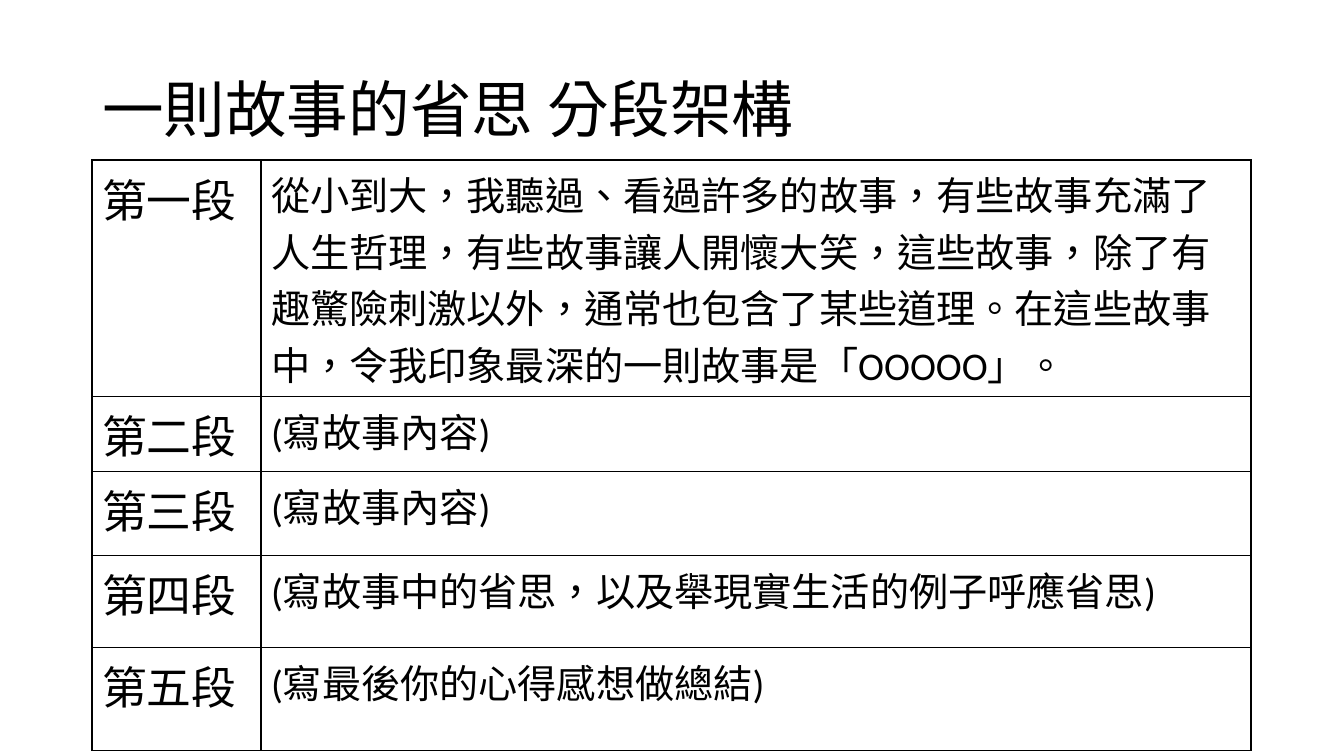
from dataclasses import dataclass

from lxml.etree import SubElement
from pptx import Presentation
from pptx.dml.color import RGBColor
from pptx.enum.lang import MSO_LANGUAGE_ID as Lang
from pptx.enum.text import MSO_ANCHOR as Anchor, MSO_AUTO_SIZE as Fit, PP_ALIGN as Align
from pptx.oxml.ns import qn
from pptx.util import Pt

TITLE = "一則故事的省思 分段架構"
ROWS = [  # label, text, height in px
    ("第一段", "從小到大，我聽過、看過許多的故事，有些故事充滿了人生哲理，"
     "有些故事讓人開懷大笑，這些故事，除了有趣驚險刺激以外，"
     "通常也包含了某些道理。在這些故事中，令我印象最深的一則故事是「OOOOO」。", 103),
    ("第二段", "(寫故事內容)", 75),
    ("第三段", "(寫故事內容)", 84),
    ("第四段", "(寫故事中的省思，以及舉現實生活的例子呼應省思)", 92),
    ("第五段", "(寫最後你的心得感想做總結)", 103),
]
COLS = (169, 990)
LEFT, WIDTH = 92, sum(COLS)
TITLE_TOP, TITLE_HIGH, TABLE_TOP = 40, 146, 160


@dataclass(frozen=True)
class Theme:
    font: str = "Calibri"
    ink: str = "000000"
    head: int = 44
    label: int = 32
    body: int = 28
    rule: int = 1


THEME = Theme()


def px(n):
    return round(n * 914400 / 100.8)


def write(frame, text, size, anchor=Anchor.TOP, spacing=None):
    frame.word_wrap = True
    frame.vertical_anchor = anchor
    para = frame.paragraphs[0]
    para.alignment = Align.LEFT
    if spacing:
        para.line_spacing = spacing
    run = para.add_run()
    run.text = text
    font = run.font
    font.name, font.size = THEME.font, Pt(size)
    font.color.rgb = RGBColor.from_string(THEME.ink)
    font.language_id = Lang.TRADITIONAL_CHINESE


def frame_cell(cell):
    """Give a cell no fill and a thin line on all four sides."""
    props = cell._tc.get_or_add_tcPr()
    for side in ("a:lnL", "a:lnR", "a:lnT", "a:lnB"):
        line = SubElement(props, qn(side), w=str(Pt(THEME.rule)))
        fill = SubElement(line, qn("a:solidFill"))
        SubElement(fill, qn("a:srgbClr"), val=THEME.ink)
    cell.fill.background()


def add_title(slide):
    title = slide.shapes.title
    title.left, title.top = px(LEFT), px(TITLE_TOP)
    title.width, title.height = px(WIDTH), px(TITLE_HIGH)
    frame = title.text_frame
    frame.auto_size = Fit.NONE
    write(frame, TITLE, THEME.head, anchor=Anchor.MIDDLE, spacing=0.9)


def add_grid(slide):
    high = sum(row[-1] for row in ROWS)
    table = slide.shapes.add_table(
        len(ROWS), len(COLS), px(LEFT), px(TABLE_TOP), px(WIDTH), px(high)).table
    table.first_row = table.horz_banding = False
    for col, wide in zip(table.columns, COLS):
        col.width = px(wide)
    for row, (label, text, tall) in zip(table.rows, ROWS):
        row.height = px(tall)
        parts = ((label, THEME.label), (text, THEME.body))
        for cell, (words, size) in zip(row.cells, parts):
            write(cell.text_frame, words, size)
            frame_cell(cell)


def main():
    deck = Presentation()
    deck.slide_width, deck.slide_height = px(1344), px(756)
    slide = deck.slides.add_slide(deck.slide_layouts[5])
    add_title(slide)
    add_grid(slide)
    deck.save("out.pptx")


if __name__ == "__main__":
    main()
